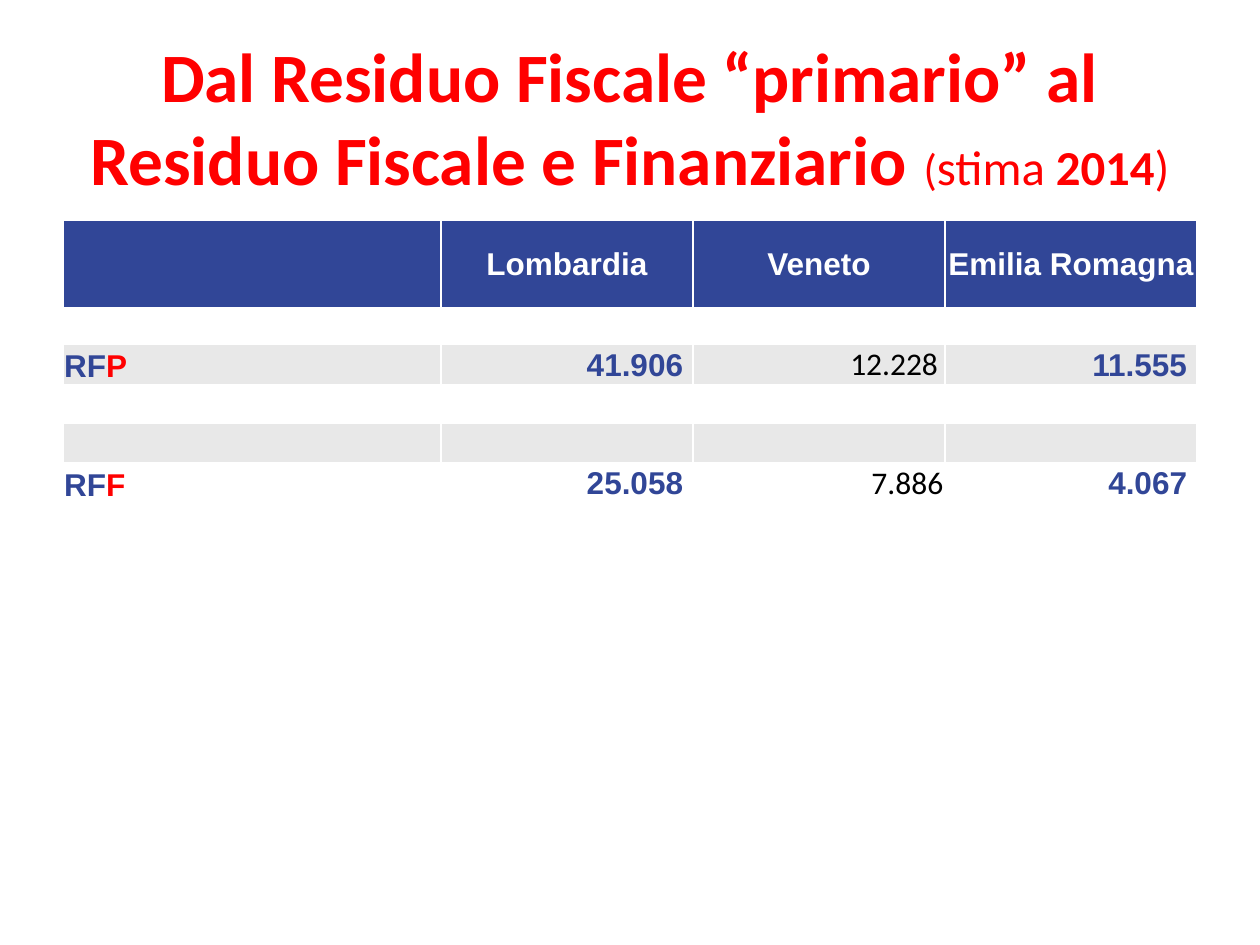
from lxml import etree
from pptx import Presentation
from pptx.dml.color import RGBColor
from pptx.enum.text import MSO_ANCHOR, PP_ALIGN
from pptx.oxml.ns import qn
from pptx.util import Pt

RED = RGBColor(0xFF, 0x00, 0x00)
BLUE = RGBColor(0x31, 0x46, 0x97)
GREY = RGBColor(0xE8, 0xE8, 0xE8)
WHITE = RGBColor(0xFF, 0xFF, 0xFF)
BLACK = RGBColor(0x00, 0x00, 0x00)
LEFT, CENTER, RIGHT = PP_ALIGN.LEFT, PP_ALIGN.CENTER, PP_ALIGN.RIGHT
MIDDLE, BOTTOM = MSO_ANCHOR.MIDDLE, MSO_ANCHOR.BOTTOM


def write(frame, text, size=18, font="Arial", color=BLUE, bold=True, align=LEFT):
    """Append a run to the first paragraph of the frame."""
    para = frame.paragraphs[0]
    para.alignment = align
    run = para.add_run()
    run.text = text
    run.font.size = Pt(size)
    run.font.name = font
    run.font.bold = bold
    run.font.color.rgb = color


def border(cell, side):
    """Draw a white 1 pt line on one side ("lnL" or "lnT") of the cell."""
    line = etree.Element(qn("a:" + side), w=str(Pt(1)))
    fill = etree.SubElement(line, qn("a:solidFill"))
    etree.SubElement(fill, qn("a:srgbClr"), val=str(WHITE))
    cell._tc.get_or_add_tcPr().insert(0, line)


prs = Presentation()
prs.slide_width, prs.slide_height = Pt(720), Pt(540)
slide = prs.slides.add_slide(prs.slide_layouts[5])

# Title
title = slide.shapes.title
title.left, title.top, title.width, title.height = Pt(36), Pt(21.6), Pt(648), Pt(90)
title.text_frame.vertical_anchor = MIDDLE
for text, size, bold in [
    ("Dal Residuo Fiscale “primario” al Residuo Fiscale e Finanziario ", 39.6, True),
    ("(", 25.2, False),
    ("stima ", 27.9, False),
    ("2014", 27.9, True),
    (")", 27.9, False),
]:
    write(title.text_frame, text, size, "Calibri", RED, bold, CENTER)

# Table grid
widths = [216, 144, 144, 144]
heights = [50, 21] + [22.5] * 4
table = slide.shapes.add_table(
    len(heights), len(widths), Pt(36), Pt(126), Pt(sum(widths)), Pt(sum(heights))
).table
for col, width in zip(table.columns, widths):
    col.width = Pt(width)
for row, height in zip(table.rows, heights):
    row.height = Pt(height)

fills = [BLUE, WHITE, GREY, WHITE, GREY, WHITE]
for r, fill in enumerate(fills):
    for c in range(len(widths)):
        cell = table.cell(r, c)
        cell.fill.solid()
        cell.fill.fore_color.rgb = fill
        cell.vertical_anchor = MIDDLE
        cell.margin_left = cell.margin_right = cell.margin_top = Pt(0.7)
        cell.margin_bottom = 0
        if r == 0:
            border(cell, "lnT")
        if c == 0:
            border(cell, "lnL")
        # Small type in empty cells keeps the rows from growing
        cell.text_frame.paragraphs[0]._p.get_or_add_endParaRPr().set("sz", "1200")

# Header
for c, name in enumerate(["Lombardia", "Veneto", "Emilia Romagna"], 1):
    write(table.cell(0, c).text_frame, name, color=WHITE, align=CENTER)

# Values, with the right inset of the Veneto figure
for r, mark, values, inset in [
    (2, "P", ["41.906", "12.228", "11.555"], 4),
    (5, "F", ["25.058", "7.886", "4.067"], 1),
]:
    label = table.cell(r, 0)
    label.vertical_anchor = BOTTOM
    write(label.text_frame, "RF")
    write(label.text_frame, mark, color=RED)
    for c, value in enumerate(values, 1):
        cell = table.cell(r, c)
        if c == 2:
            cell.margin_right = Pt(inset)
            write(cell.text_frame, value, font="Calibri", color=BLACK, bold=False, align=RIGHT)
        else:
            cell.margin_right = Pt(5.7)
            write(cell.text_frame, value, align=RIGHT)

prs.save("out.pptx")
